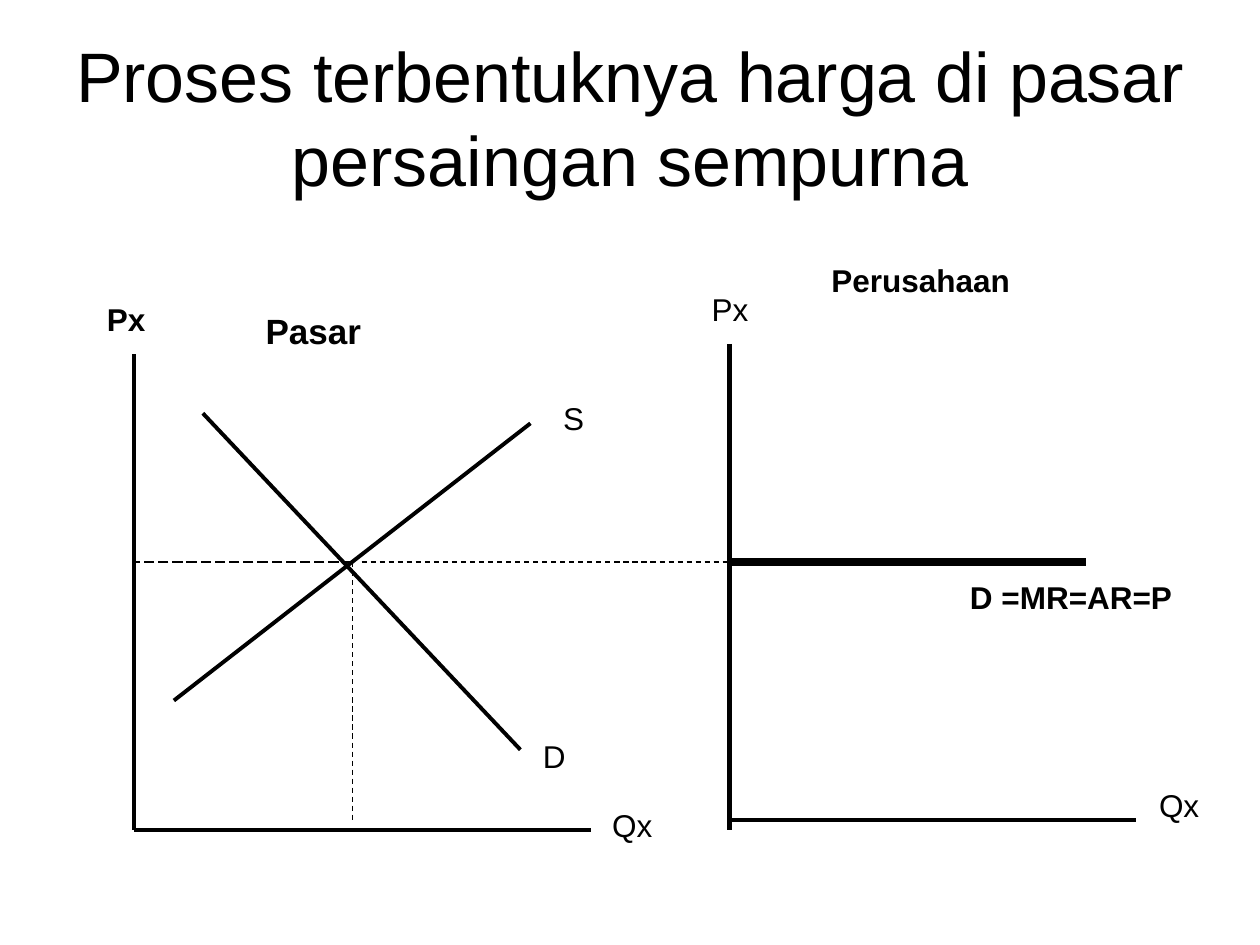
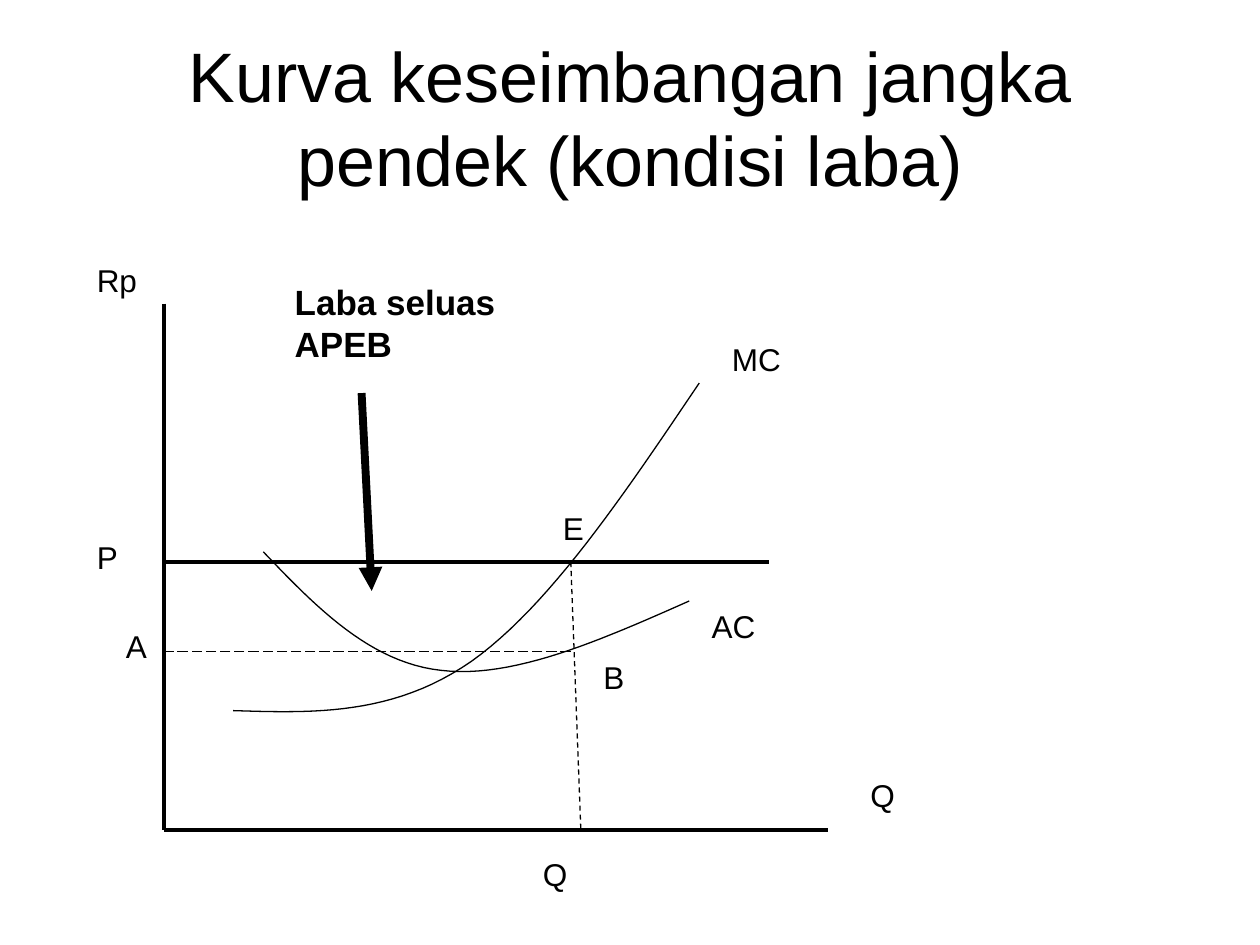
from dataclasses import dataclass

import pptx
import pptx.dml.color
import pptx.enum.dml
import pptx.enum.shapes
import pptx.enum.text
import pptx.oxml
import pptx.oxml.ns
import pptx.util

Inches = pptx.util.Inches
Pt = pptx.util.Pt
Dash = pptx.enum.dml.MSO_LINE
Anchor = pptx.enum.text.MSO_ANCHOR
Align = pptx.enum.text.PP_ALIGN


@dataclass(frozen=True)
class Theme:
    """Colours, font, type sizes and line widths of the deck."""
    ink: pptx.dml.color.RGBColor = pptx.dml.color.RGBColor(0, 0, 0)
    font: str = "Arial"
    title: int = 40
    heading: int = 20
    label: int = 18
    thin: float = 0.75
    medium: float = 2.25
    thick: float = 3
    heavy: float = 4.5


@dataclass(frozen=True)
class Box:
    """A region in inches; a graph's axes run along its left and bottom."""
    left: float
    top: float
    width: float
    height: float

    def at(self, x, y):
        """Return the slide position of a point given from the top left."""
        return Inches(self.left + x), Inches(self.top + y)


THEME = Theme()
TITLE = Box(0.5, 0.3, 9, 1.25)
MARKET = Box(1.06, 2.81, 3.63, 3.78)
FIRM = Box(5.79, 2.73, 3.23, 3.78)
PROFIT = Box(1.3, 2.41, 5.27, 4.18)


def add_text(s, box, x, y, w, text, h=0.4, size=THEME.label, bold=False,
             align=Align.LEFT, anchor=Anchor.TOP):
    """Place text relative to a box."""
    sp = s.shapes.add_textbox(*box.at(x, y), Inches(w), Inches(h))
    tf = sp.text_frame
    tf.word_wrap = True
    tf.vertical_anchor = anchor
    p = tf.paragraphs[0]
    p.alignment = align
    r = p.add_run()
    r.text = text
    formats = {"name": THEME.font, "size": Pt(size), "bold": bold}
    for name, value in formats.items():
        setattr(r.font, name, value)
    r.font.color.rgb = THEME.ink


def add_labels(s, box, labels):
    """Place plain labels given as (x, y, width, text)."""
    for label in labels:
        add_text(s, box, *label)


def style_line(line, width, dash=None):
    """Give a line its colour, width and dash."""
    line.color.rgb = THEME.ink
    line.width = Pt(width)
    if dash:
        line.dash_style = dash


def add_line(s, box, start, end, width=THEME.medium, dash=None, arrow=False):
    """Draw a straight line between two points of a box."""
    sp = s.shapes.add_connector(pptx.enum.shapes.MSO_CONNECTOR.STRAIGHT,
                                *box.at(*start), *box.at(*end))
    style_line(sp.line, width, dash)
    ns = pptx.oxml.ns.nsdecls("a")
    if arrow:
        head = pptx.oxml.parse_xml(f'<a:tailEnd {ns} type="triangle"/>')
        sp.line._get_or_add_ln().append(head)
    sp._element.spPr.append(pptx.oxml.parse_xml(f"<a:effectLst {ns}/>"))


def add_axes(s, box, width=THEME.medium, overrun=0):
    """Draw the vertical and horizontal axes of a graph."""
    add_line(s, box, (0, 0), (0, box.height + overrun), width)
    add_line(s, box, (0, box.height), (box.width, box.height))


def bezier(points, t):
    """Return the point at t of a cubic Bezier curve."""
    weights = ((1 - t) ** 3, 3 * t * (1 - t) ** 2, 3 * t ** 2 * (1 - t), t ** 3)
    return tuple(sum(w * v for w, v in zip(weights, axis)) for axis in zip(*points))


def add_curve(s, box, points, steps=24):
    """Draw a chain of cubic Bezier curves through a box."""
    trace = [box.at(*bezier(points[i:i + 4], n / steps))
             for i in range(0, len(points) - 1, 3) for n in range(1, steps + 1)]
    builder = s.shapes.build_freeform(*box.at(*points[0]))
    builder.add_line_segments(trace, close=False)
    sp = builder.convert_to_shape()
    sp.fill.background()
    sp.shadow.inherit = False
    style_line(sp.line, THEME.thin)


def add_slide(prs, title):
    """Add a blank slide with a centred title."""
    s = prs.slides.add_slide(prs.slide_layouts[6])
    add_text(s, TITLE, 0, 0, TITLE.width, title, TITLE.height, THEME.title,
             align=Align.CENTER, anchor=Anchor.MIDDLE)
    return s


def draw_market(s, box):
    """Draw market supply and demand, with the price carried to the firm."""
    price, quantity = 1.65, 1.74
    add_axes(s, box)
    add_line(s, box, (0.55, 0.47), (3.07, 3.14))
    add_line(s, box, (0.32, 2.75), (3.15, 0.55))
    add_line(s, box, (quantity, price), (0, price), THEME.thin, Dash.LONG_DASH)
    add_line(s, box, (quantity, price), (quantity, 3.7), THEME.thin, Dash.DASH)
    add_line(s, box, (1.81, price), (FIRM.left - box.left, price),
             THEME.thin, Dash.DASH)
    add_text(s, box, -0.31, -0.48, 0.63, "Px", bold=True)
    add_text(s, box, 0.95, -0.4, 2.44, "Pasar", 0.43, THEME.heading, True)
    add_labels(s, box, [(3.7, 3.54, 1.42, "Qx"), (3.15, 2.99, 0.39, "D"),
                        (3.31, 0.31, 0.55, "S")])


def draw_firm(s, box):
    """Draw the horizontal demand curve of a single firm."""
    add_axes(s, box, THEME.thick, 0.08)
    add_line(s, box, (0, 1.73), (2.83, 1.73), THEME.heavy)
    add_text(s, box, 1.81, 1.81, 1.97, "D =MR=AR=P", bold=True)
    add_text(s, box, 0.71, -0.71, 2.91, "Perusahaan", bold=True)
    add_labels(s, box, [(-0.24, -0.48, 0.63, "Px"), (3.31, 3.46, 0.55, "Qx")])


def draw_profit(s, box):
    """Draw price, marginal and average cost, and point to the profit area."""
    price, cost, quantity = 2.05, 2.76, 3.23
    marginal_cost = [(0.55, 3.23), (1.19, 3.25), (1.82, 3.27), (2.44, 2.84),
                     (3.06, 2.4), (3.65, 1.52), (4.25, 0.63)]
    average_cost = [(0.79, 1.97), (1.21, 2.41), (1.64, 2.85), (2.2, 2.91),
                    (2.77, 2.98), (3.47, 2.67), (4.17, 2.36)]
    add_axes(s, box)
    add_line(s, box, (0, price), (4.8, price))
    add_line(s, box, (quantity, price), (3.31, box.height), THEME.thin, Dash.DASH)
    add_line(s, box, (quantity, cost), (0, cost), THEME.thin, Dash.LONG_DASH)
    for curve in (marginal_cost, average_cost):
        add_curve(s, box, curve)
    add_labels(s, box, [
        (4.41, 0.24, 0.71, "MC"), (4.25, 2.36, 1.02, "AC"),
        (-0.4, 2.52, 0.47, "A"), (-0.63, 1.81, 0.79, "P"),
        (-0.63, -0.39, 1.1, "Rp"), (5.51, 3.7, 1.02, "Q"),
        (3.07, 1.58, 0.63, "E"), (3.39, 2.76, 0.63, "B"),
        (2.91, 4.33, 1.18, "Q")])
    add_text(s, box, 0.94, -0.23, 2.52, "Laba seluas APEB", 0.77,
             THEME.heading, True)
    add_line(s, box, (1.57, 0.71), (1.65, 2.28), THEME.heavy, arrow=True)


def main():
    """Build both slides and save the deck."""
    prs = pptx.Presentation()
    prs.slide_width, prs.slide_height = Inches(10), Inches(7.5)
    s = add_slide(prs, "Proses terbentuknya harga di pasar persaingan sempurna")
    draw_market(s, MARKET)
    draw_firm(s, FIRM)
    s = add_slide(prs, "Kurva keseimbangan jangka pendek (kondisi laba)")
    draw_profit(s, PROFIT)
    prs.save("out.pptx")


if __name__ == "__main__":
    main()
